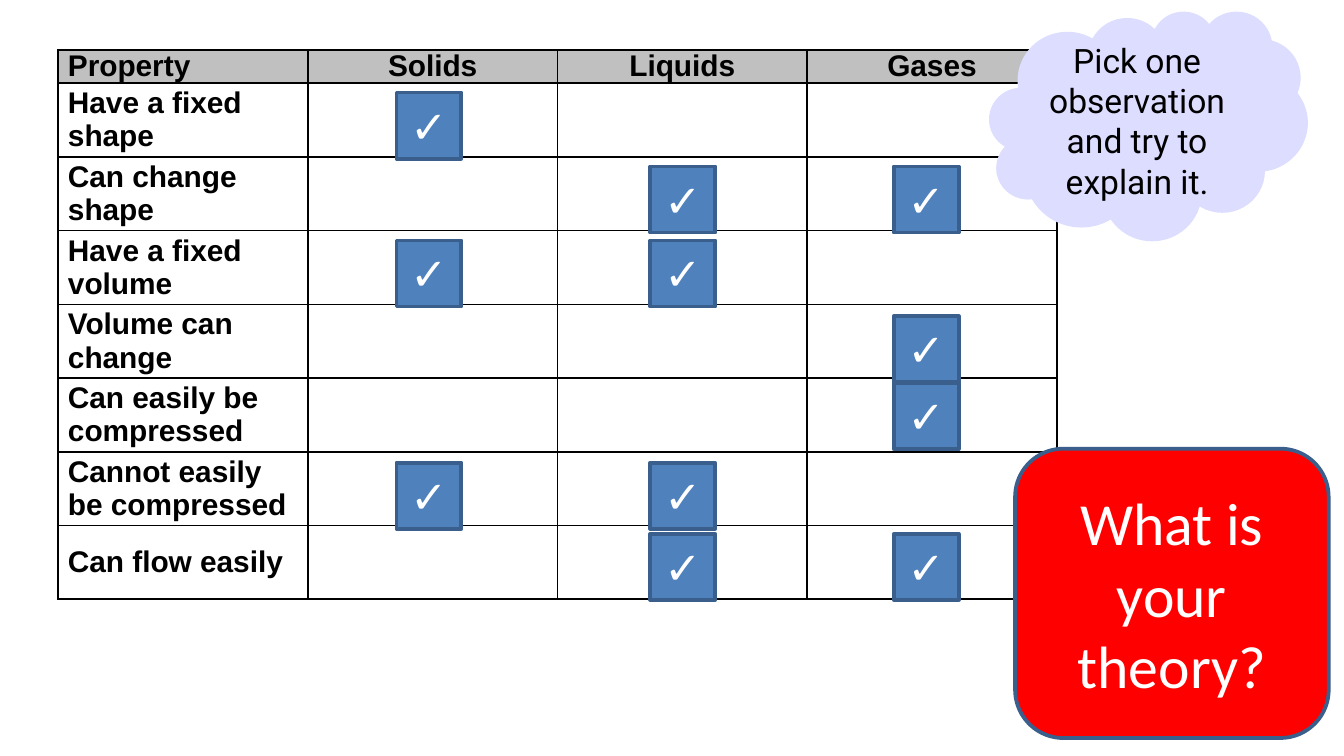
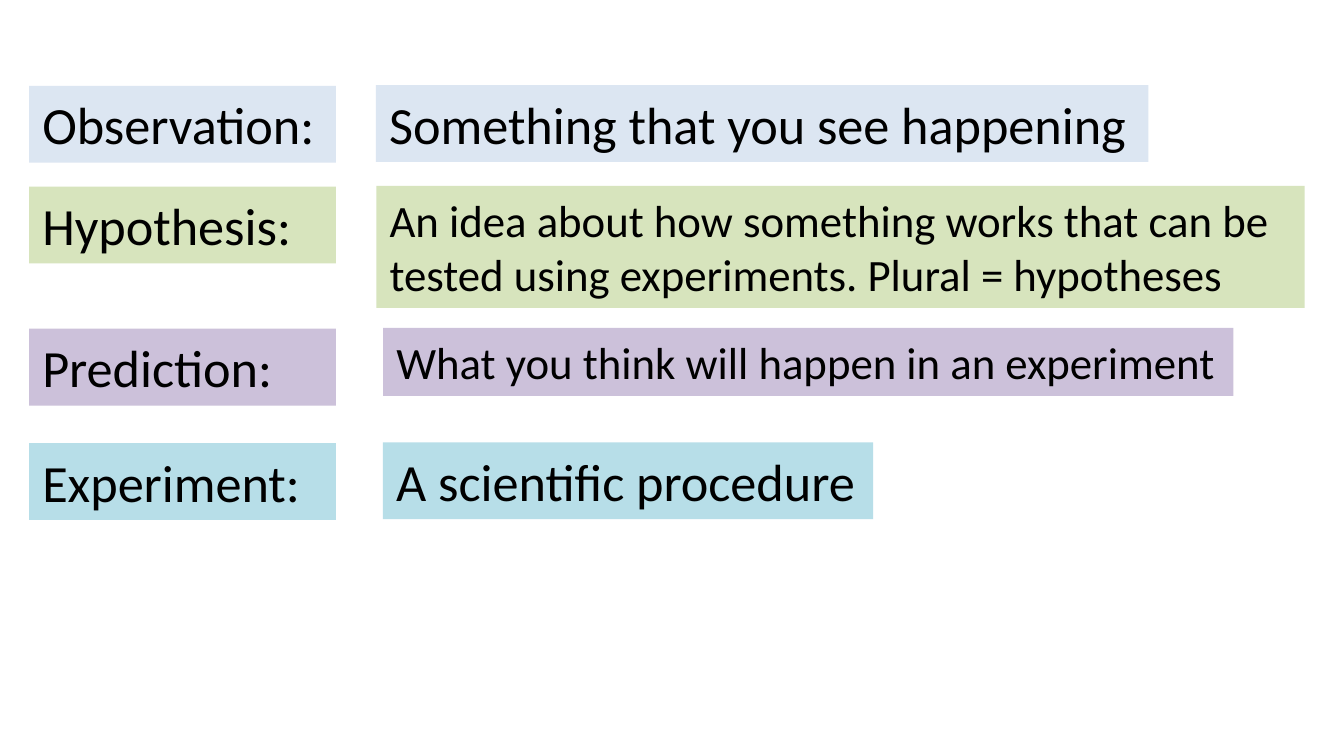
from pptx import Presentation
from pptx.util import Pt
from pptx.dml.color import RGBColor as Rgb
from pptx.enum.shapes import MSO_SHAPE as Kind
from pptx.enum.text import PP_ALIGN as Align, MSO_ANCHOR as Anchor, MSO_AUTO_SIZE as Auto
from pptx.oxml import parse_xml
from pptx.oxml.ns import nsdecls

HUES = {
    "black": "000000", "white": "FFFFFF", "grey": "C0C0C0", "red": "FF0000",
    "tick": "4F81BD", "edge": "3A5F8C", "cloud": "DDDDFF",
    "blue": "DCE6F2", "green": "D7E4BD", "plum": "CCC1DA", "aqua": "B7DEE8",
}

# Text formats: font values
HEAD = {"name": "Arial", "size": Pt(16), "bold": True}
TICK = {"name": "Arial", "size": Pt(24)}
CLOUD = {"name": "Roboto", "size": Pt(18)}
ASK = {"name": "Calibri", "size": Pt(32)}
TERM = {"name": "Calibri", "size": Pt(28)}
SMALL = {"name": "Calibri", "size": Pt(24)}

# Paragraph formats
MID = {"alignment": Align.CENTER}
LEFT = {"alignment": Align.LEFT}
MARK = {**MID, "line_spacing": Pt(12), "space_after": Pt(6)}

# Property, top of its ticks, and the states that have it
STATES = ["Solids", "Liquids", "Gases"]
COLS = dict(zip("SLG", (212.4, 348.4, 478.8)))
FACTS = [
    ("Have a fixed shape", 49.6, "S"),
    ("Can change shape", 89.2, "LG"),
    ("Have a fixed volume", 128.8, "SL"),
    ("Volume can change", 169.4, "G"),
    ("Can easily be compressed", 205.3, "G"),
    ("Cannot easily be compressed", 247.9, "SL"),
    ("Can flow easily", 286, "LG"),
]

# Term, meaning, colour, top, then left, width, height and font of the meaning
WORDS = [
    ("Observation:", "Something that you see happening",
     "blue", 45.6, 201.4, 413.8, 41.2, TERM),
    ("Hypothesis:", "An idea about how something works that can be "
     "tested using experiments. Plural = hypotheses",
     "green", 99.6, 201.6, 497.4, 65.4, SMALL),
    ("Prediction:", "What you think will happen in an experiment",
     "plum", 175.7, 205.2, 455.6, 36.4, SMALL),
    ("Experiment:", "A scientific procedure",
     "aqua", 237, 205.2, 262.6, 41.2, TERM),
]


def rgb(hue):
    return Rgb.from_string(HUES[hue])


def apply(item, form):
    for key, val in form.items():
        setattr(item, key, val)


def write(frame, text, font, hue="black", para=LEFT):
    line = frame.paragraphs[0]
    apply(line, para)
    run = line.add_run()
    run.text = text
    apply(run.font, font)
    run.font.color.rgb = rgb(hue)
    return line


def add_box(slide, kind, area, fill, text, font, hue="black", para=MID,
            edge=None, anchor=Anchor.MIDDLE, auto=Auto.NONE):
    box = slide.shapes.add_shape(kind, *map(Pt, area))
    box.shadow.inherit = False
    box.fill.solid()
    box.fill.fore_color.rgb = rgb(fill)
    if edge:
        box.line.color.rgb = rgb(edge)
        box.line.width = Pt(2)
    else:
        box.line.fill.background()
    frame = box.text_frame
    apply(frame, {"word_wrap": True, "vertical_anchor": anchor, "auto_size": auto})
    write(frame, text, font, hue, para)
    return box


def add_tick(slide, left, top):
    box = add_box(slide, Kind.RECTANGLE, (left, top, 34.8, 35.4), "tick", "✓", TICK,
                  "white", MARK, "edge", Anchor.BOTTOM)
    # Hanging indent
    props = box.text_frame.paragraphs[0]._p.get_or_add_pPr()
    props.set("marL", str(Pt(17)))
    props.set("indent", str(Pt(-17)))


def rule_cell(cell):
    props = cell._tc.get_or_add_tcPr()
    for side in "LRTB":
        props.append(parse_xml(
            f'<a:ln{side} {nsdecls("a")} w="{Pt(1)}"><a:solidFill>'
            f'<a:srgbClr val="{HUES["black"]}"/></a:solidFill></a:ln{side}>'))


def add_grid(slide):
    rows = [["Property", *STATES]] + [[fact[0], "", "", ""] for fact in FACTS]
    area = map(Pt, (31.2, 26.8, 535, 293))
    grid = slide.shapes.add_table(len(rows), 4, *area).table
    apply(grid, {"first_row": False, "horz_banding": False})
    for col in grid.columns:
        col.width = Pt(133.75)
    for r, row in enumerate(rows):
        grid.rows[r].height = Pt(39.5 if r else 16)
        for c, text in enumerate(row):
            cell = grid.cell(r, c)
            rule_cell(cell)
            if r:
                cell.fill.background()
            else:
                cell.fill.solid()
                cell.fill.fore_color.rgb = rgb("grey")
            if text:
                apply(cell, {"margin_left": Pt(5.2), "margin_right": Pt(5.2),
                             "margin_top": 0, "margin_bottom": 0,
                             "vertical_anchor": Anchor.MIDDLE if r else Anchor.TOP})
                para = {**(MID if c else LEFT), "space_after": Pt(2 if r else 3)}
                write(cell.text_frame, text, HEAD, para=para)


def add_facts(slide):
    add_grid(slide)
    for _, top, marks in FACTS:
        for mark in marks:
            add_tick(slide, COLS[mark], top)
    # Prompts
    cloud = add_box(slide, Kind.CLOUD_CALLOUT, (530, 5.8, 170.6, 123), "cloud",
                    "Pick one observation and try to explain it.", CLOUD)
    cloud.adjustments[0] = 0.49
    cloud.adjustments[1] = -1.09
    add_box(slide, Kind.ROUNDED_RECTANGLE, (543.8, 240.4, 168, 155), "red",
            "What is your theory?", ASK, "white", edge="edge")


def add_words(slide):
    form = {"para": LEFT, "anchor": Anchor.TOP, "auto": Auto.SHAPE_TO_FIT_TEXT}
    for term, text, hue, top, left, wide, high, font in WORDS:
        add_box(slide, Kind.RECTANGLE, (15.6, top + 0.4, 164.4, 41.2),
                hue, term, TERM, **form)
        add_box(slide, Kind.RECTANGLE, (left, top, wide, high),
                hue, text, font, **form)


def main():
    deck = Presentation()
    deck.slide_width, deck.slide_height = Pt(720), Pt(405)
    for fill in (add_facts, add_words):
        fill(deck.slides.add_slide(deck.slide_layouts[6]))
    deck.save("out.pptx")


if __name__ == "__main__":
    main()
